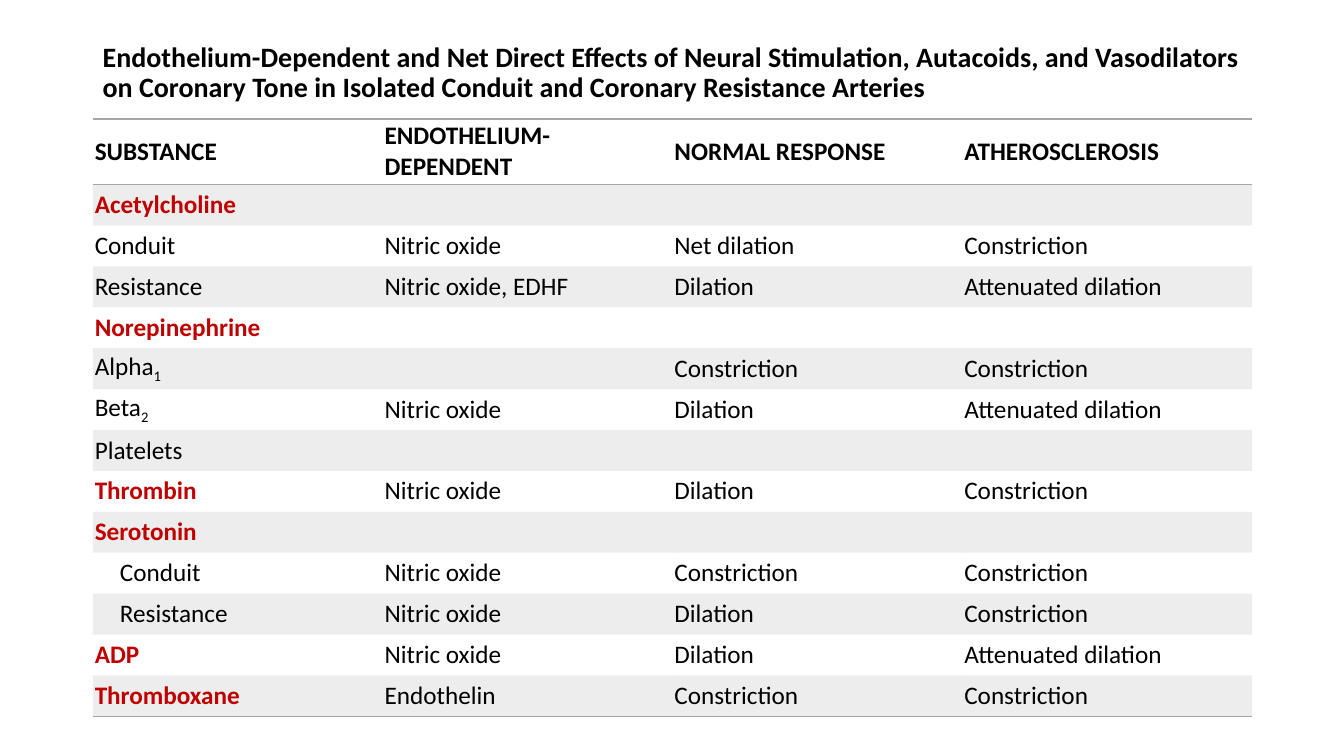
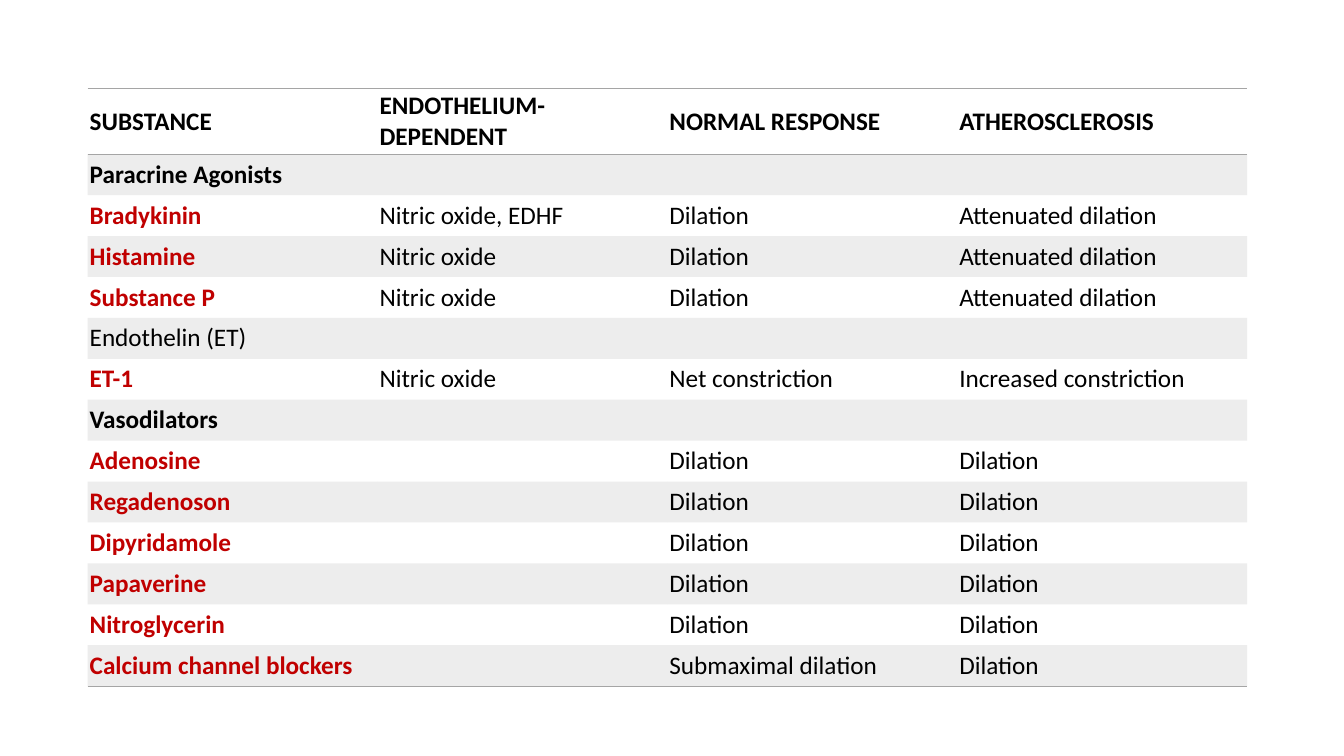
from lxml import etree
from pptx import Presentation
from pptx.dml.color import RGBColor
from pptx.enum.text import MSO_ANCHOR
from pptx.oxml.ns import qn
from pptx.util import Inches, Pt

MIDDLE = MSO_ANCHOR.MIDDLE
FONT = "Calibri"
COLORS = {"text": "000000", "accent": "C00000", "rule": "A5A5A5"}
BAND_ALPHA = 20000
NO_GRID_STYLE = "{2D5ABB26-0587-4C30-8999-92F81FD0307C}"
SLIDE_SIZE = (13.33, 7.5)
TABLE_WIDTH = 11.5
TABLE_HEIGHT = 5.93
HEADER_HEIGHT = 0.65
CELL_MARGIN = 0.02
INDENT = 0.25

TITLE = (
    "Endothelium-Dependent and Net Direct Effects of Neural Stimulation, "
    "Autacoids, and Vasodilators on Coronary Tone in Isolated Conduit and "
    "Coronary Resistance Arteries"
)
HEADER = ("SUBSTANCE", "ENDOTHELIUM-DEPENDENT", "NORMAL RESPONSE", "ATHEROSCLEROSIS")

NAME_STYLES = {
    "agent": {"bold": True, "color": "accent"},
    "group": {"bold": True},
    "plain": {},
    "indented": {},
}

# A row without values spans the table; an underscore starts a subscript.
NEURAL_ROWS = [
    ("agent", "Acetylcholine"),
    ("plain", "Conduit", "Nitric oxide", "Net dilation", "Constriction"),
    ("plain", "Resistance", "Nitric oxide, EDHF", "Dilation", "Attenuated dilation"),
    ("agent", "Norepinephrine"),
    ("plain", "Alpha_1", "", "Constriction", "Constriction"),
    ("plain", "Beta_2", "Nitric oxide", "Dilation", "Attenuated dilation"),
    ("plain", "Platelets"),
    ("agent", "Thrombin", "Nitric oxide", "Dilation", "Constriction"),
    ("agent", "Serotonin", "", "", ""),
    ("indented", "Conduit", "Nitric oxide", "Constriction", "Constriction"),
    ("indented", "Resistance", "Nitric oxide", "Dilation", "Constriction"),
    ("agent", "ADP", "Nitric oxide", "Dilation", "Attenuated dilation"),
    ("agent", "Thromboxane", "Endothelin", "Constriction", "Constriction"),
]
PARACRINE_ROWS = [
    ("group", "Paracrine Agonists"),
    ("agent", "Bradykinin", "Nitric oxide, EDHF", "Dilation", "Attenuated dilation"),
    ("agent", "Histamine", "Nitric oxide", "Dilation", "Attenuated dilation"),
    ("agent", "Substance P", "Nitric oxide", "Dilation", "Attenuated dilation"),
    ("plain", "Endothelin (ET)"),
    ("agent", "ET-1", "Nitric oxide", "Net constriction", "Increased constriction"),
    ("group", "Vasodilators"),
    ("agent", "Adenosine", "", "Dilation", "Dilation"),
    ("agent", "Regadenoson", "", "Dilation", "Dilation"),
    ("agent", "Dipyridamole", "", "Dilation", "Dilation"),
    ("agent", "Papaverine", "", "Dilation", "Dilation"),
    ("agent", "Nitroglycerin", "", "Dilation", "Dilation"),
    ("agent", "Calcium channel blockers", "", "Submaximal dilation", "Dilation"),
]
SLIDES = [
    {"title": TITLE, "rows": NEURAL_ROWS, "left": 0.92, "top": 1.18},
    {"title": None, "rows": PARACRINE_ROWS, "left": 0.87, "top": 0.88},
]


def write_text(text_frame, text, size=18, bold=False, color="text", line_spacing=None):
    paragraph = text_frame.paragraphs[0]
    if line_spacing:
        paragraph.line_spacing = line_spacing
    for index, part in enumerate(text.split("_")):
        run = paragraph.add_run()
        run.text = part
        run.font.name = FONT
        run.font.size = Pt(size)
        run.font.bold = bold
        run.font.color.rgb = RGBColor.from_string(COLORS[color])
        if index:
            run._r.get_or_add_rPr().set("baseline", "-25000")


def add_title(slide, text):
    box = slide.shapes.add_textbox(Inches(0.92), 0, Inches(11.5), Inches(1.45))
    box.text_frame.word_wrap = True
    box.text_frame.vertical_anchor = MIDDLE
    write_text(box.text_frame, text, size=20, bold=True, line_spacing=0.9)


def fill_band(cell):
    cell.fill.solid()
    cell.fill.fore_color.rgb = RGBColor.from_string(COLORS["rule"])
    color = cell._tc.tcPr.find(".//" + qn("a:srgbClr"))
    etree.SubElement(color, qn("a:alpha"), val=str(BAND_ALPHA))


def add_rules(cell, sides):
    for index, side in enumerate(sides):
        line = etree.Element(qn("a:ln" + side), w=str(Pt(1)))
        fill = etree.SubElement(line, qn("a:solidFill"))
        etree.SubElement(fill, qn("a:srgbClr"), val=COLORS["rule"])
        cell._tc.get_or_add_tcPr().insert(index, line)


def format_cell(cell, banded, sides, indent):
    cell.vertical_anchor = MIDDLE
    cell.margin_left = Inches(CELL_MARGIN + indent)
    cell.margin_right = cell.margin_top = cell.margin_bottom = Inches(CELL_MARGIN)
    if banded:
        fill_band(cell)
    else:
        cell.fill.background()
    add_rules(cell, sides)


def add_effects_table(slide, rows, left, top):
    frame = slide.shapes.add_table(
        len(rows) + 1, len(HEADER),
        Inches(left), Inches(top), Inches(TABLE_WIDTH), Inches(TABLE_HEIGHT),
    )
    table = frame.table
    table.horz_banding = False
    table._tbl.tblPr.find(qn("a:tableStyleId")).text = NO_GRID_STYLE
    row_height = (TABLE_HEIGHT - HEADER_HEIGHT) / len(rows)

    for row_index, (style, *texts) in enumerate([("group", *HEADER)] + rows):
        is_header = row_index == 0
        table.rows[row_index].height = Inches(HEADER_HEIGHT if is_header else row_height)
        sides = "TB" if is_header else "B" if row_index == len(rows) else ""
        for column in range(len(HEADER)):
            indent = INDENT if style == "indented" and column == 0 else 0
            format_cell(table.cell(row_index, column), row_index % 2 == 1, sides, indent)
        if len(texts) == 1:
            table.cell(row_index, 0).merge(table.cell(row_index, len(HEADER) - 1))
        for column, text in enumerate(texts):
            text_style = NAME_STYLES[style] if is_header or column == 0 else {}
            if text:
                write_text(table.cell(row_index, column).text_frame, text, **text_style)


def main():
    presentation = Presentation()
    presentation.slide_width, presentation.slide_height = map(Inches, SLIDE_SIZE)
    for content in SLIDES:
        slide = presentation.slides.add_slide(presentation.slide_layouts[6])
        if content["title"]:
            add_title(slide, content["title"])
        add_effects_table(slide, content["rows"], content["left"], content["top"])
    presentation.save("out.pptx")


if __name__ == "__main__":
    main()
